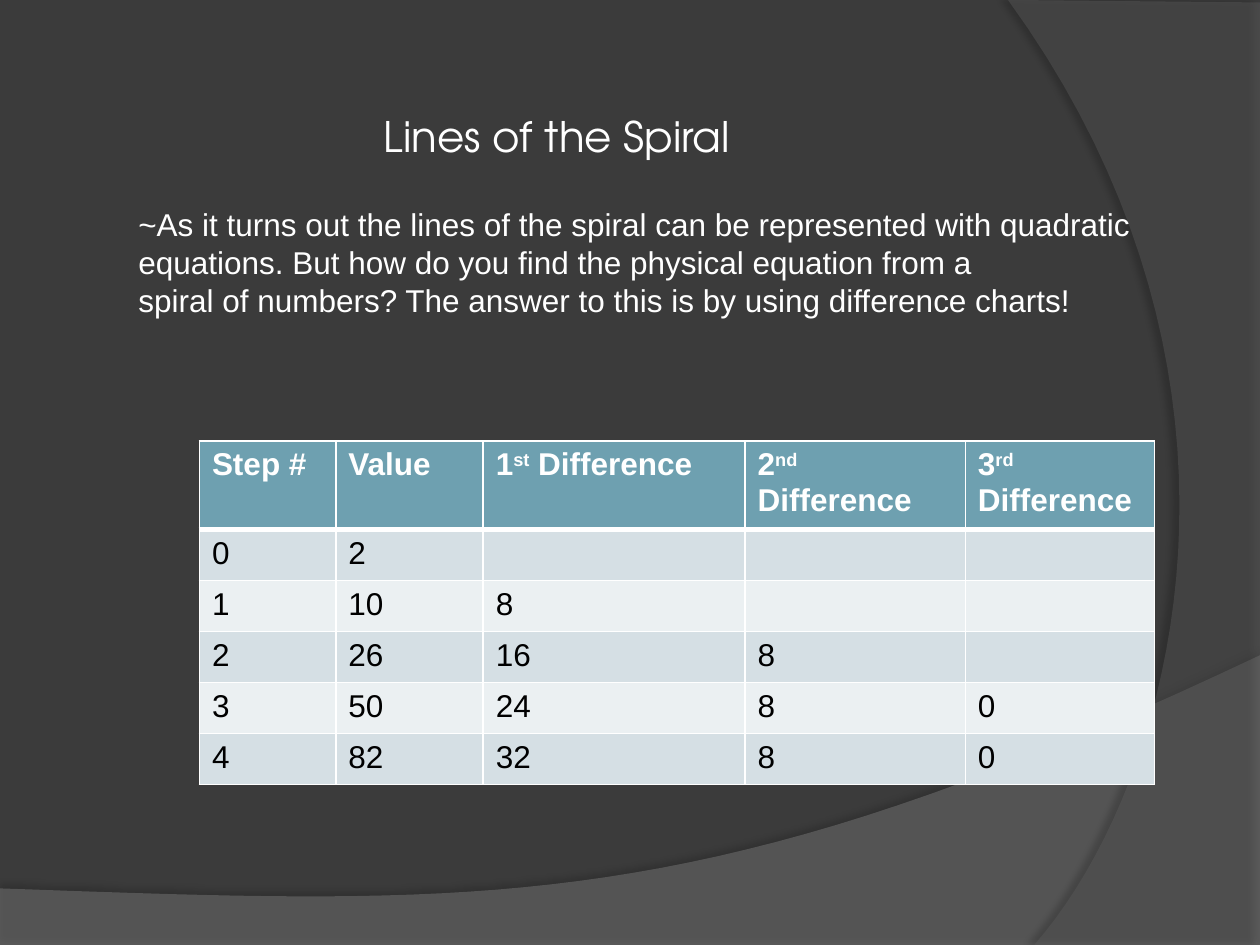
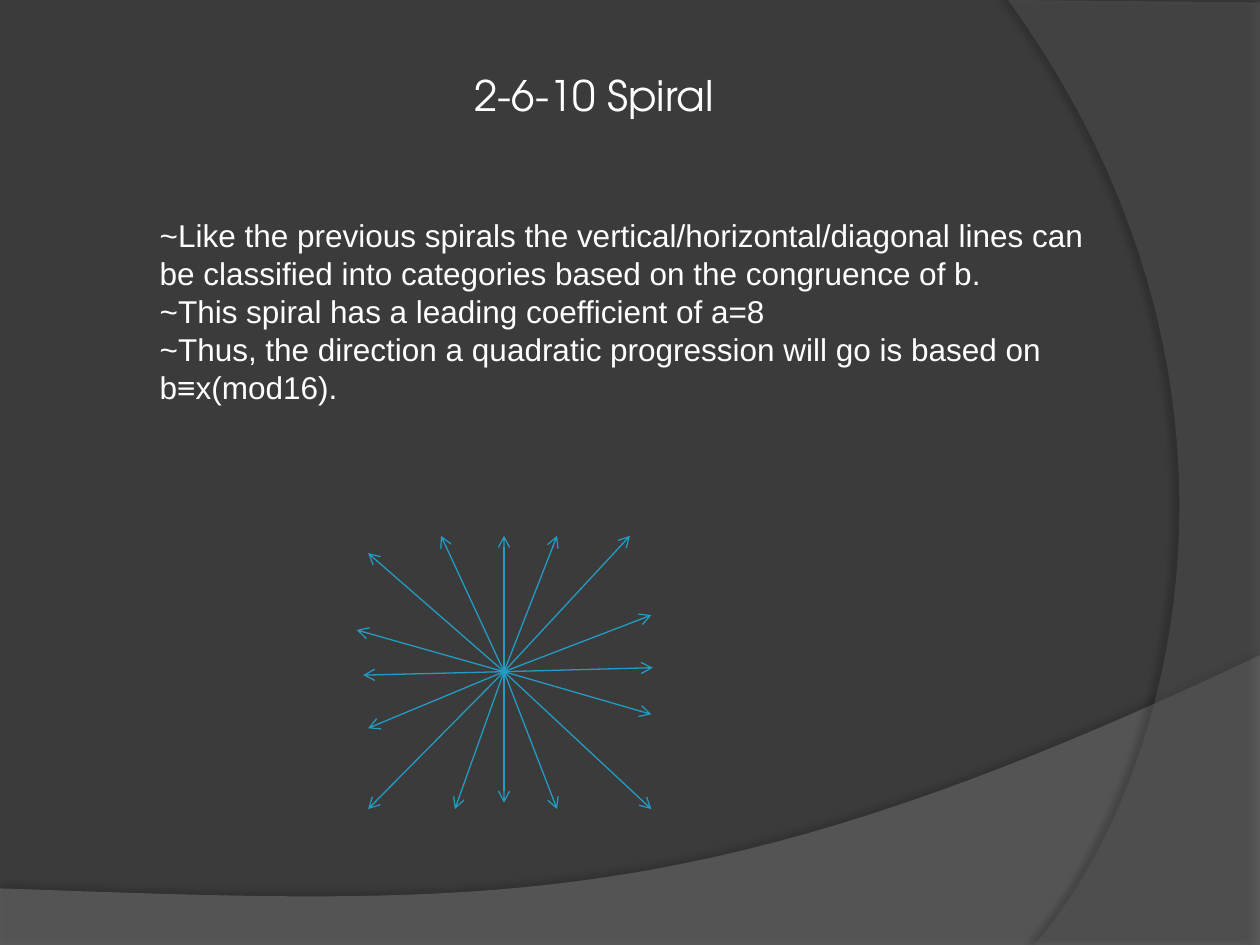
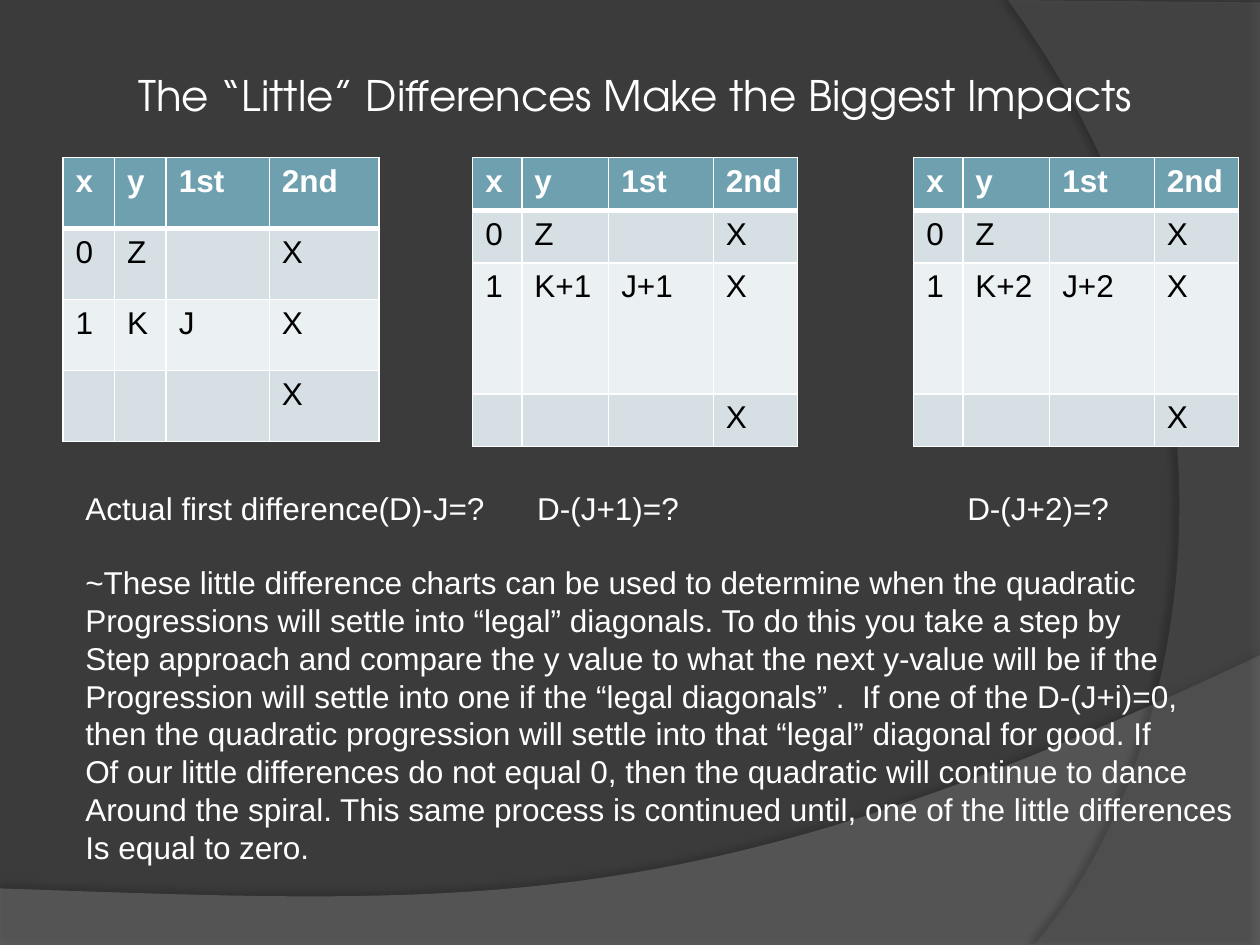
from lxml import etree
from pptx import Presentation, util as u
from pptx.dml.color import RGBColor
from pptx.enum import shapes, text
from pptx.oxml.ns import qn

WHITE, BLACK, BACK, BLUE = "FFFFFF", "000000", "3B3B3B", "239BC2"
HEAD, BANDS = "6EA0B0", ("D5DFE4", "EBF0F2")
BODY, TITLE = "Arial", "TeX Gyre Adventor"

SWOOPS = [
    dict(pts=[(0, 17.91), (0, 19.08), (25.4, 19.08), (25.4, 13.21)],
         bend=[(14.2, 18.52), (9.93, 18.26), (0, 17.91)],
         fill="7F7F7F", alpha=45, shade=35, dist=3.5, angle=270),
    dict(pts=[(25.4, 0.05), (25.4, 19.05), (20.85, 19.05)],
         bend=[(23.75, 15.72), (25.86, 7.62), (20.32, 0)],
         fill="5E5E5E", alpha=40, shade=45, dist=4, angle=180),
]

STEPS = [
    ("Step #", "Value", "1^st^ Difference", "2^nd^ Difference", "3^rd^ Difference"),
    ("0", "2", "", "", ""),
    ("1", "10", "8", "", ""),
    ("2", "26", "16", "8", ""),
    ("3", "50", "24", "8", "0"),
    ("4", "82", "32", "8", "0"),
]
WIDE = (0.99, 1.75, 2.11, 1.7)
TALL = (1.06, 1.06, 2.64, 1.06)


def trial(k, j):
    return [("x", "y", "1st", "2nd"), ("0", "Z", "", "X"),
            ("1", k, j, "X"), ("", "", "", "X")]


HUB = (10.16, 13.54)
TIPS = [
    (7.42, 16.31), (12.7, 10.8), (7.42, 11.15), (13.13, 16.31),
    (9.17, 16.31), (11.23, 16.31), (8.89, 10.8), (11.23, 10.8),
    (13.13, 12.4), (13.13, 14.4), (7.19, 12.7), (7.42, 14.68),
    (7.32, 13.61), (10.16, 10.8), (10.16, 16.18), (13.16, 13.46),
]

SLIDES = [
    dict(
        title=("Lines of the Spiral", (7.49, 2.11, 8.31, 1.27)),
        body=([
            "~As it turns out the lines of the spiral can be represented with quadratic",
            "equations. But how do you find the physical equation from a",
            "spiral of numbers? The answer to this is by using difference charts!",
        ], (2.54, 4.01, 20.88, 2.57)),
        tables=[(STEPS, (4.02, 8.89), (2.75, 2.97, 5.28, 4.44, 3.81), [1.03] * 6)],
    ),
    dict(
        title=("2-6-10 Spiral", (9.32, 1.27, 5.77, 1.27)),
        body=([
            "~Like the previous spirals the vertical/horizontal/diagonal lines can",
            "be classified into categories based on the congruence of b.",
            "~This spiral has a leading coefficient of a=8",
            "~Thus, the direction a quadratic progression will go is based on",
            "b≡x(mod16).",
        ], (2.97, 4.24, 20.04, 4.11)),
        tips=TIPS,
    ),
    dict(
        title=("The “Little” Differences Make the Biggest Impacts",
               (2.54, 1.27, 21.03, 1.27)),
        body=([
            "~These little difference charts can be used to determine when the quadratic",
            "Progressions will settle into “legal” diagonals. To do this you take a step by",
            "Step approach and compare the y value to what the next y-value will be if the",
            "Progression will settle into one if the “legal diagonals” .  If one of the D-(J+i)=0,",
            "then the quadratic progression will settle into that “legal” diagonal for good. If",
            "Of our little differences do not equal 0, then the quadratic will continue to dance",
            "Around the spiral. This same process is continued until, one of the little differences",
            "Is equal to zero.",
        ], (1.47, 11.23, 24, 6.4)),
        tables=[
            (trial("K", "J"), (1.27, 3.18), (1.04, 1.04, 2.08, 2.21), [1.43] * 4),
            (trial("K+1", "J+1"), (9.53, 3.18), WIDE, TALL),
            (trial("K+2", "J+2"), (18.42, 3.18), WIDE, TALL),
        ],
        sums=("Actual first difference(D)-J=?\tD-(J+1)=?\tD-(J+2)=?",
              (1.47, 9.73, 22.86, 1.02), (9.11, 17.78)),
    ),
]


def rgb(code):
    return RGBColor.from_string(code)


def cm(nums):
    return [u.Cm(n) for n in nums]


def sub(node, tag, **attrs):
    return etree.SubElement(node, qn(tag), {k: str(v) for k, v in attrs.items()})


def write(frame, lines, font=BODY, size=18, color=WHITE, bold=False, tabs=()):
    for i, line in enumerate(lines):
        para = frame.paragraphs[0] if i == 0 else frame.add_paragraph()
        if tabs:
            stops = sub(para._p.get_or_add_pPr(), "a:tabLst")
            for pos in cm(tabs):
                sub(stops, "a:tab", pos=pos, algn="l")
        for k, part in enumerate(line.split("^")):
            run = para.add_run()
            run.text = part
            run.font.name, run.font.size = font, u.Pt(size)
            run.font.bold, run.font.color.rgb = bold, rgb(color)
            if k % 2:
                run._r.get_or_add_rPr().set("baseline", "30000")


def label(slide, lines, box, wrap=False, **form):
    frame = slide.shapes.add_textbox(*cm(box)).text_frame
    frame.word_wrap = wrap
    frame.auto_size = text.MSO_AUTO_SIZE.SHAPE_TO_FIT_TEXT
    write(frame, lines, **form)


def curve(start, bend, steps=40):
    for i in range(1, steps + 1):
        t = i / steps
        parts = ((1 - t) ** 3, 3 * t * (1 - t) ** 2, 3 * t * t * (1 - t), t ** 3)
        yield [sum(w * p[a] for w, p in zip(parts, (start, *bend))) for a in (0, 1)]


def swoop(slide, pts, bend, fill, alpha, shade, dist, angle):
    path = [cm(p) for p in (*pts, *curve(pts[-1], bend))]
    pen = slide.shapes.build_freeform(*path[0])
    pen.add_line_segments(path[1:], close=True)
    shape = pen.convert_to_shape()
    shape.fill.solid()
    shape.fill.fore_color.rgb = rgb(fill)
    shape.line.fill.background()
    shape.shadow.inherit = False
    props = shape.element.spPr
    sub(props.find(".//" + qn("a:srgbClr")), "a:alpha", val=alpha * 1000)
    glow = sub(props.find(qn("a:effectLst")), "a:outerShdw", blurRad=u.Pt(4),
               dist=u.Pt(dist), dir=angle * 60000, algn="ctr", rotWithShape=0)
    sub(sub(glow, "a:srgbClr", val=BLACK), "a:alpha", val=shade * 1000)
    return shape


def edge(cell, side, width):
    line = sub(cell._tc.get_or_add_tcPr(), "a:ln" + side, w=u.Pt(width))
    sub(sub(line, "a:solidFill"), "a:srgbClr", val=WHITE)


def grid(slide, rows, spot, cols, highs):
    size = (sum(cols), sum(highs))
    table = slide.shapes.add_table(len(rows), len(cols), *cm((*spot, *size))).table
    for col, wide in zip(table.columns, cm(cols)):
        col.width = wide
    for r, row in enumerate(rows):
        table.rows[r].height = u.Cm(highs[r])
        for c, word in enumerate(row):
            cell = table.cell(r, c)
            for side in "LRTB":
                edge(cell, side, 3 if (r, side) in ((0, "B"), (1, "T")) else 1)
            cell.fill.solid()
            cell.fill.fore_color.rgb = rgb(BANDS[(r - 1) % 2] if r else HEAD)
            if word:
                write(cell.text_frame, [word], bold=r == 0,
                      color=BLACK if r else WHITE)


def arrow(slide, tip):
    link = slide.shapes.add_connector(shapes.MSO_CONNECTOR.STRAIGHT, *cm((*HUB, *tip)))
    link.line.color.rgb = rgb(BLUE)
    link.line.width = u.Pt(0.75)
    props = link.element.spPr
    sub(props.find(qn("a:ln")), "a:tailEnd", type="arrow")
    sub(props, "a:effectLst")


def main():
    deck = Presentation()
    deck.slide_width, deck.slide_height = cm((25.4, 19.05))
    master = deck.slide_master
    master.background.fill.solid()
    master.background.fill.fore_color.rgb = rgb(BACK)
    for i, plan in enumerate(SLIDES):
        slide = deck.slides.add_slide(deck.slide_layouts[6])
        if i == 0:
            for look in SWOOPS:
                master.element.cSld.spTree.append(swoop(slide, **look).element)
        title, box = plan["title"]
        label(slide, [title], box, font=TITLE, size=24)
        for spec in plan.get("tables", ()):
            grid(slide, *spec)
        label(slide, *plan["body"])
        for tip in plan.get("tips", ()):
            arrow(slide, tip)
        if "sums" in plan:
            line, box, tabs = plan["sums"]
            label(slide, [line], box, wrap=True, tabs=tabs)
    deck.save("out.pptx")


if __name__ == "__main__":
    main()
